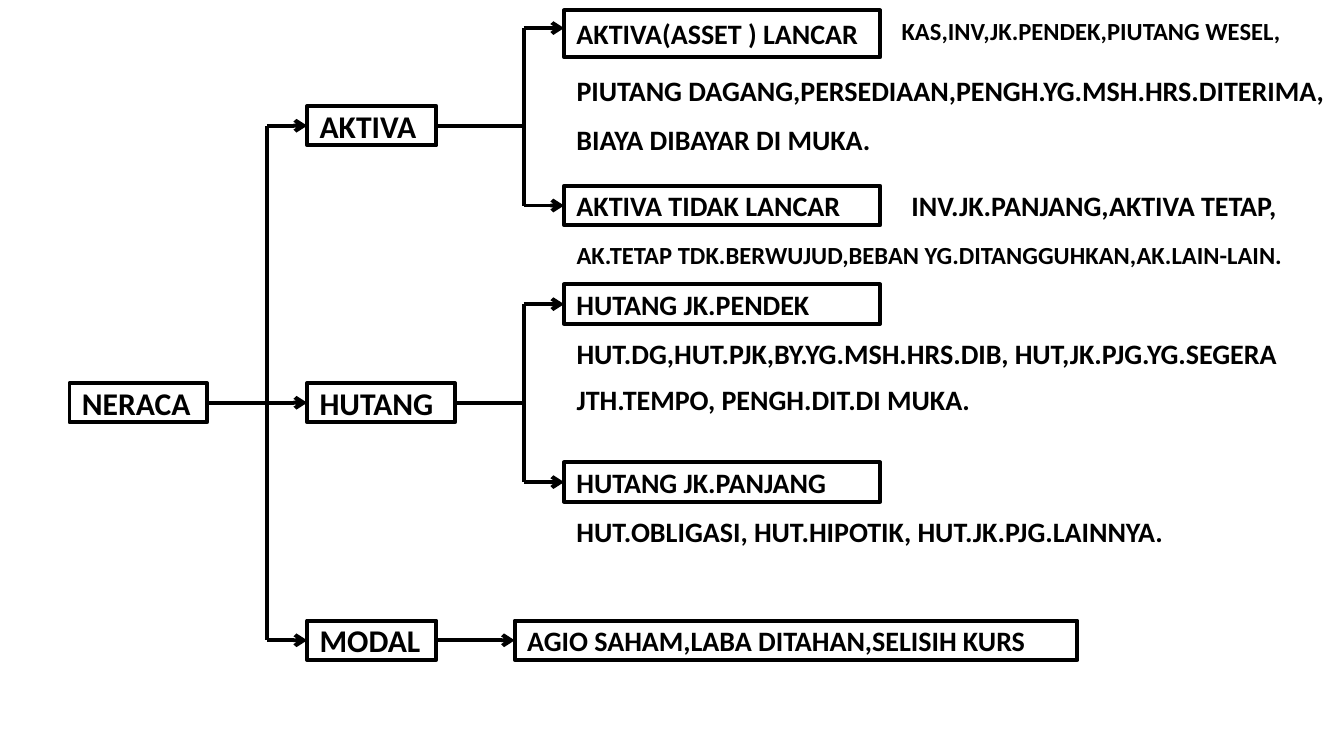
from lxml.etree import SubElement
from pptx import Presentation
from pptx.dml.color import RGBColor as Color
from pptx.enum.shapes import MSO_CONNECTOR as Connector, MSO_SHAPE as Shape
from pptx.enum.text import MSO_ANCHOR as Anchor, PP_ALIGN as Align
from pptx.oxml.ns import qn
from pptx.util import Inches, Pt

COLORS = {"ink": "000000", "paper": "FFFFFF"}
CELL = Inches(0.39)  # one column or row of the square grid
LOW, HIGH = 0.8, 0.95  # box heights, in rows
LINE = Pt(2.25)
LEFT_SIDE, RIGHT_SIDE = 1, 3

# Main columns of the grid
ROOT, ACCOUNT, DETAIL = 1.41, 6.23, 11.44
MAIN_TRUNK, DETAIL_TRUNK = 5.41, 10.62


def grid(cells):
    return round(cells * CELL)


def add_label(page, text, left, top, width, height=LOW, size=16, framed=False):
    box = page.shapes.add_shape(
        Shape.RECTANGLE, grid(left), grid(top), grid(width), grid(height))
    box.shadow.inherit = False
    box.fill.solid()
    box.fill.fore_color.rgb = Color.from_string(COLORS["paper"])
    if framed:
        box.line.color.rgb = Color.from_string(COLORS["ink"])
        box.line.width = LINE
    else:
        box.line.fill.background()
    frame = box.text_frame
    frame.word_wrap = True
    frame.vertical_anchor = Anchor.MIDDLE
    para = frame.paragraphs[0]
    para.alignment = Align.LEFT
    span = para.add_run()
    span.text = text
    span.font.name = "Calibri"
    span.font.size = Pt(size)
    span.font.bold = True
    span.font.color.rgb = Color.from_string(COLORS["ink"])
    return box


def middle(box):
    return box.top + box.height // 2


def add_link(page, start, end, source=None, target=None, arrow=False):
    link = page.shapes.add_connector(Connector.STRAIGHT, *start, *end)
    link.line.color.rgb = Color.from_string(COLORS["ink"])
    link.line.width = LINE
    if arrow:
        SubElement(link.line._get_or_add_ln(), qn("a:tailEnd"), type="arrow")
    SubElement(link._element.spPr, qn("a:effectLst"))
    if source is not None:
        link.begin_connect(source, RIGHT_SIDE)
    if target is not None:
        link.end_connect(target, LEFT_SIDE)


def add_fork(page, parent, children, trunk, first_row=None):
    """Stem from the parent, a vertical trunk, and one arrow per child."""
    x = grid(trunk)
    heights = [middle(child) for child in children]
    if first_row is not None:
        heights[0] = grid(first_row)
    y = middle(parent)
    add_link(page, (parent.left + parent.width, y), (x, y), source=parent)
    add_link(page, (x, heights[0]), (x, heights[-1]))
    for child, height in zip(children, heights):
        joined = child if height == middle(child) else None
        add_link(page, (x, height), (child.left, height), target=joined, arrow=True)


def add_detail(page, left, top, heading, notes, height=LOW):
    """A framed heading with its notes, each offset from the heading's corner."""
    box = add_label(page, heading, left, top, 6.41, height, framed=True)
    for text, across, down, width, tall, size in notes:
        add_label(page, text, left + across, top + down, width, tall, size)
    return box


def add_accounts(page):
    """The balance sheet and its three main accounts."""
    root = add_label(page, "NERACA", ROOT, 7.77, 2.79, size=18, framed=True)
    accounts = [
        add_label(page, text, ACCOUNT, top, width, size=18, framed=True)
        for text, top, width in (
            ("AKTIVA", 2.15, 2.62), ("HUTANG", 7.77, 3), ("MODAL", 12.59, 2.62))
    ]
    add_fork(page, root, accounts, MAIN_TRUNK)
    return accounts


def add_assets(page, parent, left, top):
    current = add_detail(page, left, top, "AKTIVA(ASSET ) LANCAR", [
        ("KAS,INV,JK.PENDEK,PIUTANG WESEL,", 6.59, -0.06, 9.23, HIGH, 14),
        ("PIUTANG DAGANG,PERSEDIAAN,PENGH.YG.MSH.HRS.DITERIMA,",
         0, 1.15, 15.81, HIGH, 16),
        ("BIAYA DIBAYAR DI MUKA.", 0, 2.15, 6.82, HIGH, 16),
    ], HIGH)
    fixed = add_detail(page, left, top + 3.56, "AKTIVA TIDAK LANCAR", [
        ("INV.JK.PANJANG,AKTIVA TETAP,", 6.79, 0, 9.02, LOW, 16),
        ("AK.TETAP TDK.BERWUJUD,BEBAN YG.DITANGGUHKAN,AK.LAIN-LAIN.",
         0, 1, 15.81, LOW, 14),
    ])
    add_fork(page, parent, [current, fixed], DETAIL_TRUNK, first_row=top + 0.36)


def add_debts(page, parent, left, top):
    short = add_detail(page, left, top, "HUTANG JK.PENDEK", [
        ("HUT.DG,HUT.PJK,BY.YG.MSH.HRS.DIB, HUT,JK.PJG.YG.SEGERA",
         0, 1, 15.81, LOW, 16),
        ("JTH.TEMPO, PENGH.DIT.DI MUKA.", 0, 1.85, 8.62, HIGH, 16),
    ])
    long = add_detail(page, left, top + 3.61, "HUTANG JK.PANJANG", [
        ("HUT.OBLIGASI, HUT.HIPOTIK, HUT.JK.PJG.LAINNYA.", 0, 1, 13.03, LOW, 16),
    ])
    add_fork(page, parent, [short, long], DETAIL_TRUNK)


def add_equity(page, parent, left, top):
    box = add_label(page, "AGIO SAHAM,LABA DITAHAN,SELISIH KURS",
                    left, top, 11.41, framed=True)
    y = middle(parent)
    add_link(page, (parent.left + parent.width, y), (box.left, y),
             source=parent, target=box, arrow=True)


def main():
    deck = Presentation()
    deck.slide_width, deck.slide_height = Inches(10.63), Inches(5.91)
    page = deck.slides.add_slide(deck.slide_layouts[6])
    assets, debts, equity = add_accounts(page)
    add_assets(page, assets, DETAIL, 0.21)
    add_debts(page, debts, DETAIL, 5.77)
    add_equity(page, equity, DETAIL - 1, 12.59)
    deck.save("out.pptx")


if __name__ == "__main__":
    main()
